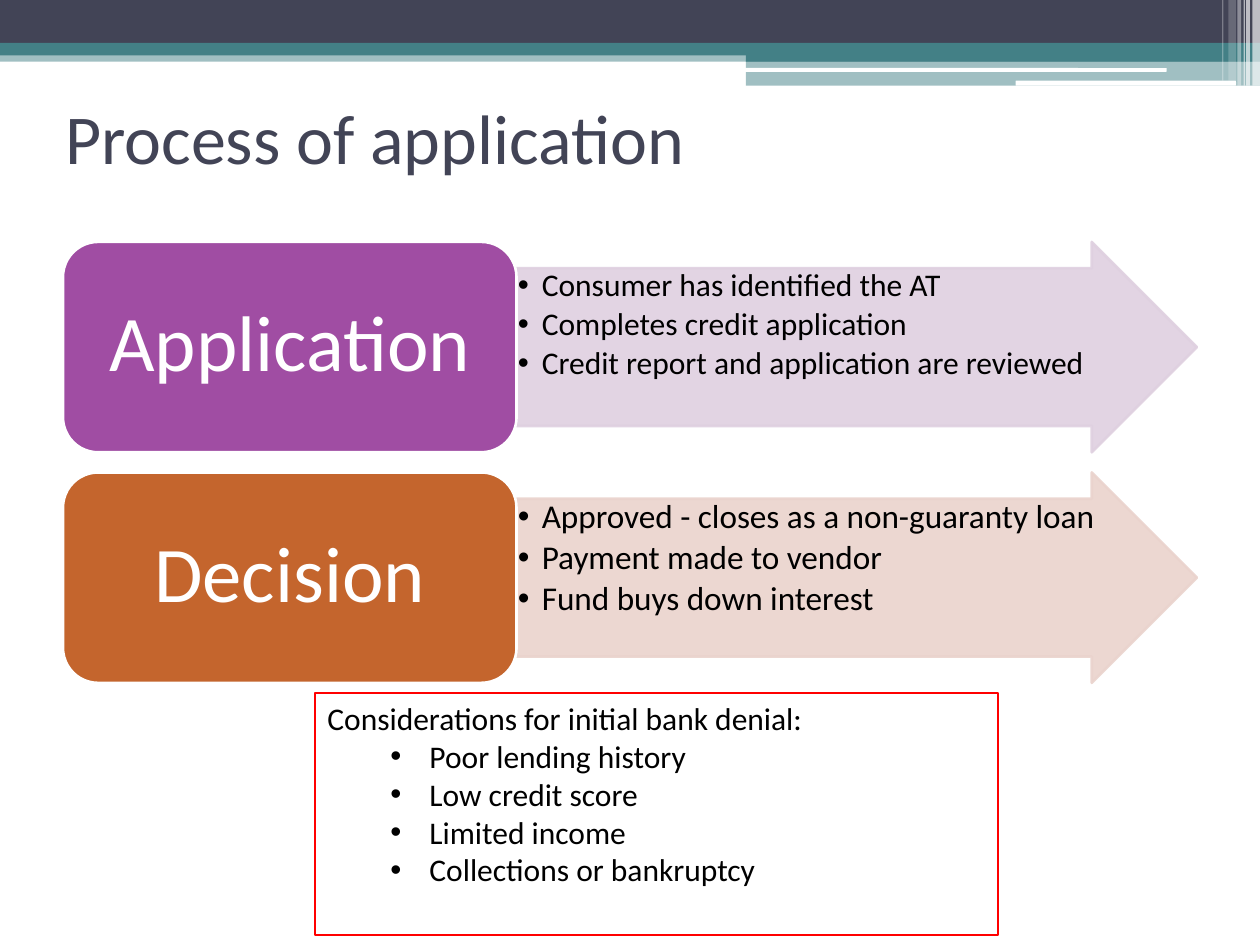
from pptx import Presentation
from pptx.dml.color import RGBColor as RGB
from pptx.enum.shapes import MSO_SHAPE as Form
from pptx.enum.text import MSO_ANCHOR as Anchor, PP_ALIGN as Align
from pptx.oxml.ns import qn
from pptx.util import Inches, Pt
from lxml.etree import SubElement as Sub

theme = {
    "font": "Calibri",
    "ink": "000000", "white": "FFFFFF", "navy": "424456", "teal": "438086",
    "red": "FF0000", "plum": "A04DA3", "lilac": "DFD0E0",
    "rust": "C4652D", "blush": "EAD3CD",
    "title": 40, "label": 45, "body": 18, "large": 19,
}

deck = Presentation()
deck.slide_width, deck.slide_height = Inches(10), Inches(7.5)
slide = deck.slides.add_slide(deck.slide_layouts[6])


def draw(form, box, fill, alpha=100, line=None, adjust=()):
    shape = slide.shapes.add_shape(form, *map(Inches, box))
    shape.shadow.inherit = False
    for i, value in enumerate(adjust):
        shape.adjustments[i] = value
    paints = [shape.fill]
    if line:
        shape.line.width = Pt(1.5)
        paints.append(shape.line.fill)
    else:
        shape.line.fill.background()
    for paint, tone in zip(paints, (fill, line)):
        paint.solid()
        paint.fore_color.rgb = RGB.from_string(theme[tone])
    if alpha < 100:
        for tint in shape._element.spPr.iter(qn("a:srgbClr")):
            Sub(tint, qn("a:alpha"), val=str(alpha * 1000))
    return shape


def write(shape, lines, size, tone="ink", frame={}, para={}, hang=None, first=0):
    text = shape.text_frame
    base = {"word_wrap": True, "vertical_anchor": Anchor.TOP}
    for name, value in (base | frame).items():
        setattr(text, name, value)
    for i, line in enumerate(lines):
        p = text.paragraphs[0] if i == 0 else text.add_paragraph()
        run = p.add_run()
        run.text = line
        look = {"name": theme["font"], "size": Pt(theme[size])}
        for name, value in look.items():
            setattr(run.font, name, value)
        run.font.color.rgb = RGB.from_string(theme[tone])
        for name, value in ({"alignment": Align.LEFT} | para).items():
            setattr(p, name, value)
        if hang and i >= first:
            p.level = 1
            props = p._p.get_or_add_pPr()
            props.set("marL", str(Inches(hang[0])))
            props.set("indent", str(-Inches(hang[1])))
            Sub(props, qn("a:buFont"), typeface="Arial")
            Sub(props, qn("a:buChar"), char="•")


bands = [
    ((0, 0.4, 10, 0.09), "teal", 50),
    ((0, 0, 10, 0.34), "navy", 100),
    ((0, 0.34, 10, 0.1), "teal", 100),
    ((5.92, 0.39, 4.08, 0.1), "teal", 100),
    ((5.92, 0.48, 4.08, 0.2), "teal", 50),
]
for box, tone, alpha in bands:
    draw(Form.RECTANGLE, box, tone, alpha)

for box in ((5.91, 0.54, 3.35, 0.03), (8.06, 0.64, 1.75, 0.04)):
    draw(Form.ROUNDED_RECTANGLE, box, "white")

stripes = [
    (9.94, 0.06, 0.68, 65), (9.89, 0.03, 0.68, 65), (9.87, 0.01, 0.68, 60),
    (9.82, 0.03, 0.68, 40), (9.75, 0.06, 0.64, 20), (9.7, 0.01, 0.64, 30),
]
for left, width, height, alpha in stripes:
    draw(Form.RECTANGLE, (left, 0, width, height), "white", alpha)

title = slide.shapes.add_textbox(*map(Inches, (0.42, 0.5, 9, 1.17)))
write(title, ["Process of application"], "title", "navy",
      {"vertical_anchor": Anchor.MIDDLE})

sides = ("left", "top", "right", "bottom")
tight = {f"margin_{side}": Inches(0.01) for side in sides}
roomy = {f"margin_{side}": Inches(gap)
         for side, gap in zip(sides, (0.19, 0.09, 0.19, 0.09))}
roomy["vertical_anchor"] = Anchor.MIDDLE

steps = [
    ("Application", "plum", "lilac", "body",
     ["Consumer has identified the AT", "Completes credit application",
      "Credit report and application are reviewed"]),
    ("Decision", "rust", "blush", "large",
     ["Approved - closes as a non-guaranty loan", "Payment made to vendor",
      "Fund buys down interest"]),
]
for row, (name, tone, pale, size, points) in enumerate(steps):
    top = 1.92 + row * 1.83
    draw(Form.RIGHT_ARROW, (4.1, top, 5.4, 1.67), pale, 90, pale, (0.75, 0.5))
    notes = slide.shapes.add_textbox(*map(Inches, (4.1, top + 0.21, 4.78, 1.25)))
    write(notes, points, size, frame=tight, hang=(0.19, 0.19),
          para={"line_spacing": 0.9, "space_after": Pt(theme[size] * 0.15)})
    draw(Form.ROUNDED_RECTANGLE, (0.5, top, 3.6, 1.67), tone, line="white")
    label = slide.shapes.add_textbox(*map(Inches, (0.58, top + 0.08, 3.44, 1.5)))
    write(label, [name], "label", "white", roomy,
          {"alignment": Align.CENTER, "line_spacing": 0.9})

denial = draw(Form.RECTANGLE, (2.5, 5.5, 5.42, 1.92), "white", line="red")
write(denial, ["Considerations for initial bank denial:", "Poor lending history",
               "Low credit score", "Limited income", "Collections or bankruptcy"],
      "body", hang=(0.81, 0.31), first=1)

deck.save("out.pptx")
